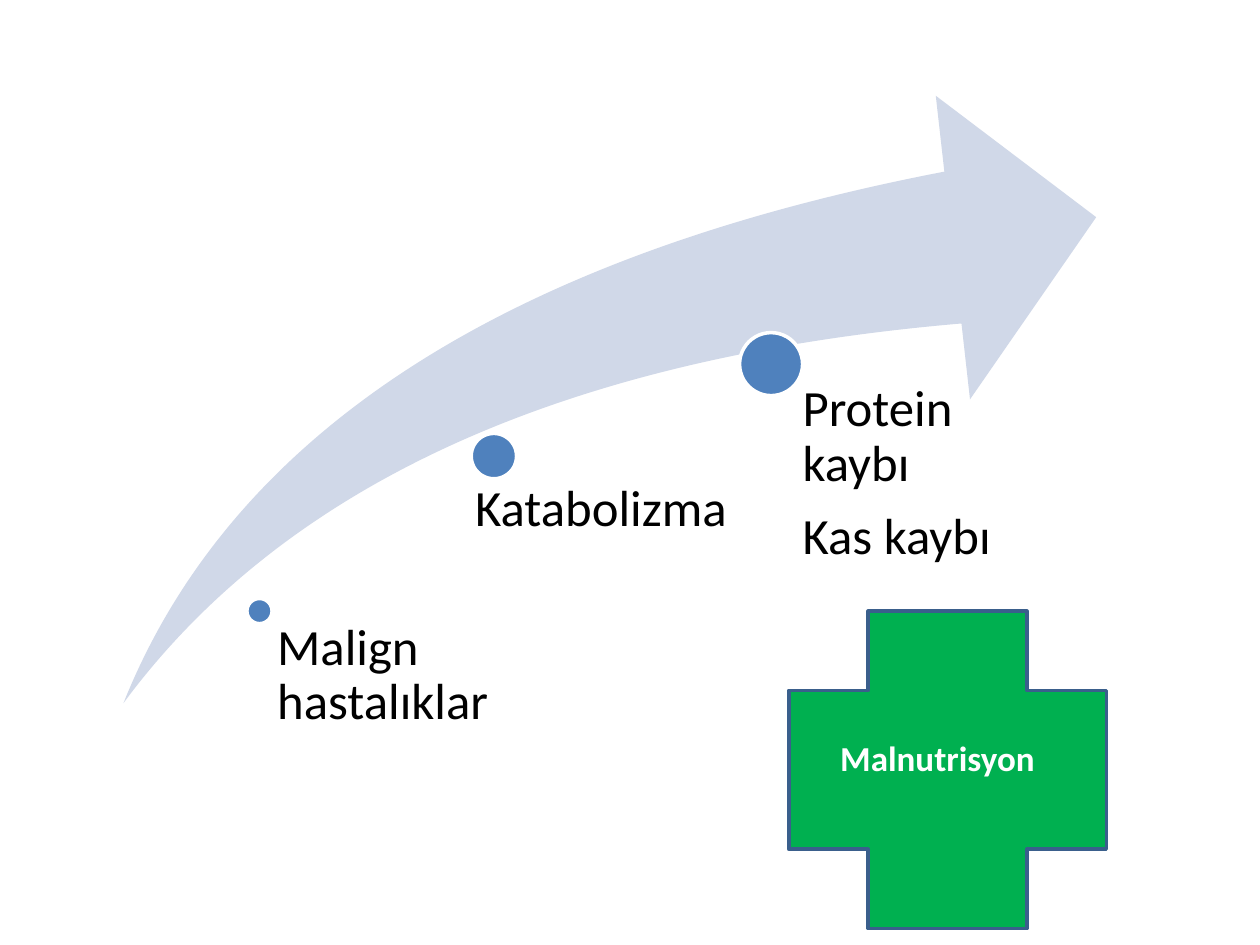
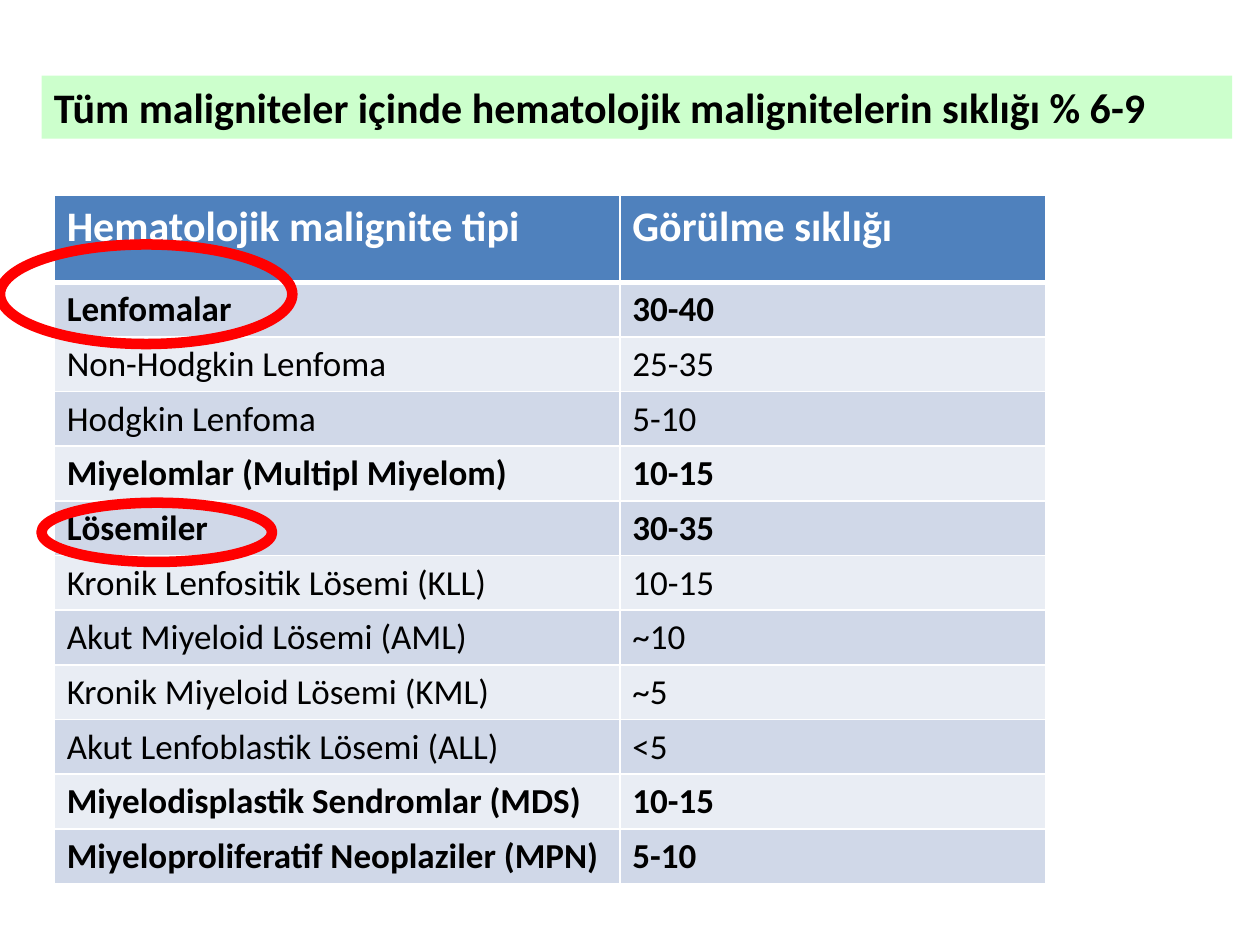
from lxml import etree
from pptx import Presentation
from pptx import util as u
from pptx.dml.color import RGBColor
from pptx.enum import shapes, text
from pptx.oxml import ns

FONT = "Calibri"
BLACK = RGBColor(0x00, 0x00, 0x00)
WHITE = RGBColor(0xFF, 0xFF, 0xFF)
BLUE = RGBColor(0x4F, 0x81, 0xBD)
PALE_BLUE = RGBColor(0xD0, 0xD8, 0xE8)
PALER_BLUE = RGBColor(0xE9, 0xED, 0xF4)
GREEN = RGBColor(0x00, 0xB0, 0x50)
NAVY = RGBColor(0x3A, 0x5F, 0x8C)
MINT = RGBColor(0xCC, 0xFF, 0xCC)
RED = RGBColor(0xFF, 0x00, 0x00)

STAGES = [
    ((1.96, 4.75, 0.2), (2.09, 4.93, 1.8, 1.39), 0.11, ["Malign hastalıklar"]),
    ((3.74, 3.44, 0.36), (3.58, 3.83, 2.52, 2.2), 0.19, ["Katabolizma"]),
    ((5.87, 2.64, 0.5), (6.1, 3.04, 1.85, 3.35), 0.27, ["Protein kaybı", "Kas kaybı"]),
]
HEADINGS = ("Hematolojik malignite tipi", "Görülme sıklığı")
FREQUENCIES = [
    ("Lenfomalar", "30-40", True),
    ("Non-Hodgkin Lenfoma", "25-35", False),
    ("Hodgkin Lenfoma", "5-10", False),
    ("Miyelomlar (Multipl Miyelom)", "10-15", True),
    ("Lösemiler", "30-35", True),
    ("Kronik Lenfositik Lösemi (KLL)", "10-15", False),
    ("Akut Miyeloid Lösemi (AML)", "~10", False),
    ("Kronik Miyeloid Lösemi (KML)", "~5", False),
    ("Akut Lenfoblastik Lösemi (ALL)", "<5", False),
    ("Miyelodisplastik Sendromlar (MDS)", "10-15", True),
    ("Miyeloproliferatif Neoplaziler (MPN)", "5-10", True),
]


def inches(box):
    """Convert a sequence of numbers to lengths."""
    return [u.Inches(value) for value in box]


def write(frame, *lines, size, color=BLACK, bold=False, spacing=None, before=None, after=None):
    """Write one paragraph per line in a shared format."""
    for index, line in enumerate(lines):
        paragraph = frame.add_paragraph() if index else frame.paragraphs[0]
        paragraph.line_spacing = spacing
        paragraph.space_before = before
        paragraph.space_after = after
        run = paragraph.add_run()
        run.text = line
        run.font.name = FONT
        run.font.size = u.Pt(size)
        run.font.bold = bold
        run.font.color.rgb = color


def add_label(slide, box, *lines, inset=None, fill=None, **style):
    """Add a wrapped text box, optionally filled or with only a left inset."""
    label = slide.shapes.add_textbox(*inches(box))
    if fill is not None:
        label.fill.solid()
        label.fill.fore_color.rgb = fill
    frame = label.text_frame
    frame.word_wrap = True
    if inset is not None:
        frame.margin_left = u.Inches(inset)
        frame.margin_top = frame.margin_right = frame.margin_bottom = 0
    write(frame, *lines, **style)


def add_figure(slide, preset, box, fill=None, line=None, width=2):
    """Add a flat preset shape."""
    figure = slide.shapes.add_shape(preset, *inches(box))
    figure.shadow.inherit = False
    if fill is None:
        figure.fill.background()
    else:
        figure.fill.solid()
        figure.fill.fore_color.rgb = fill
    if line is None:
        figure.line.fill.background()
    else:
        figure.line.color.rgb = line
        figure.line.width = u.Pt(width)
    return figure


def add_borders(cell, widths):
    """Give a cell white borders with widths by side in points."""
    properties = cell._tc.get_or_add_tcPr()
    for index, (side, width) in enumerate(widths.items()):
        border = etree.Element(ns.qn(f"a:ln{side}"), w=str(u.Pt(width)))
        fill = etree.SubElement(border, ns.qn("a:solidFill"))
        etree.SubElement(fill, ns.qn("a:srgbClr"), val=str(WHITE))
        properties.insert(index, border)


def fill_cell(cell, content, fill, widths, **style):
    """Fill, border and write a table cell."""
    cell.fill.solid()
    cell.fill.fore_color.rgb = fill
    add_borders(cell, widths)
    write(cell.text_frame, content, **style)


def add_frequency_table(slide):
    """Add the table of malignancy types and frequencies."""
    table = slide.shapes.add_table(
        len(FREQUENCIES) + 1, len(HEADINGS), *inches((0.43, 1.55, 7.87, 5.46))).table
    for column, width in zip(table.columns, (4.49, 3.38)):
        column.width = u.Inches(width)
    table.rows[0].height = u.Inches(0.69)
    for column, heading in enumerate(HEADINGS):
        fill_cell(table.cell(0, column), heading, BLUE, dict(L=1, R=1, T=1, B=3),
                  size=24, color=WHITE, bold=True)
    for row, (*values, bold) in enumerate(FREQUENCIES, 1):
        table.rows[row].height = u.Inches((5.46 - 0.69) / len(FREQUENCIES))
        for column, value in enumerate(values):
            cell = table.cell(row, column)
            cell.vertical_anchor = text.MSO_ANCHOR.MIDDLE
            fill_cell(cell, value, PALE_BLUE if row % 2 else PALER_BLUE,
                      dict(L=1, R=1, T=3 if row == 1 else 1, B=1), size=20, bold=bold)


def build_malnutrition(slide):
    """Build the path from malignant disease to malnutrition."""
    swoosh = add_figure(slide, shapes.MSO_SHAPE.SWOOSH_ARROW,
                        (0.98, 0.76, 7.72, 4.82), fill=PALE_BLUE)
    swoosh.adjustments[0] = swoosh.adjustments[1] = 0.25
    for (left, top, diameter), label_box, inset, lines in STAGES:
        add_figure(slide, shapes.MSO_SHAPE.OVAL, (left, top, diameter, diameter),
                   fill=BLUE, line=WHITE)
        add_label(slide, label_box, *lines, inset=inset, size=29, spacing=0.9, after=u.Pt(10))
    add_figure(slide, shapes.MSO_SHAPE.CROSS, (6.26, 4.85, 2.52, 2.52), fill=GREEN, line=NAVY)
    add_label(slide, (6.57, 5.8, 1.97, 0.44), "Malnutrisyon", size=20, color=WHITE, bold=True)


def build_frequencies(slide):
    """Build the table of frequencies with two groups ringed."""
    add_frequency_table(slide)
    add_label(slide, (0.33, 0.6, 9.45, 0.5),
              "Tüm maligniteler içinde hematolojik malignitelerin sıklığı % 6-9",
              fill=MINT, size=24, bold=True, before=u.Pt(4.8))
    for ring in ((0, 1.94, 2.32, 0.79), (0.33, 3.99, 1.83, 0.47)):
        add_figure(slide, shapes.MSO_SHAPE.OVAL, ring, line=RED, width=6)


def main():
    """Build and save both slides."""
    deck = Presentation()
    deck.slide_width, deck.slide_height = inches((10, 7.5))
    for build in (build_malnutrition, build_frequencies):
        build(deck.slides.add_slide(deck.slide_layouts[6]))
    deck.save("out.pptx")


if __name__ == "__main__":
    main()
